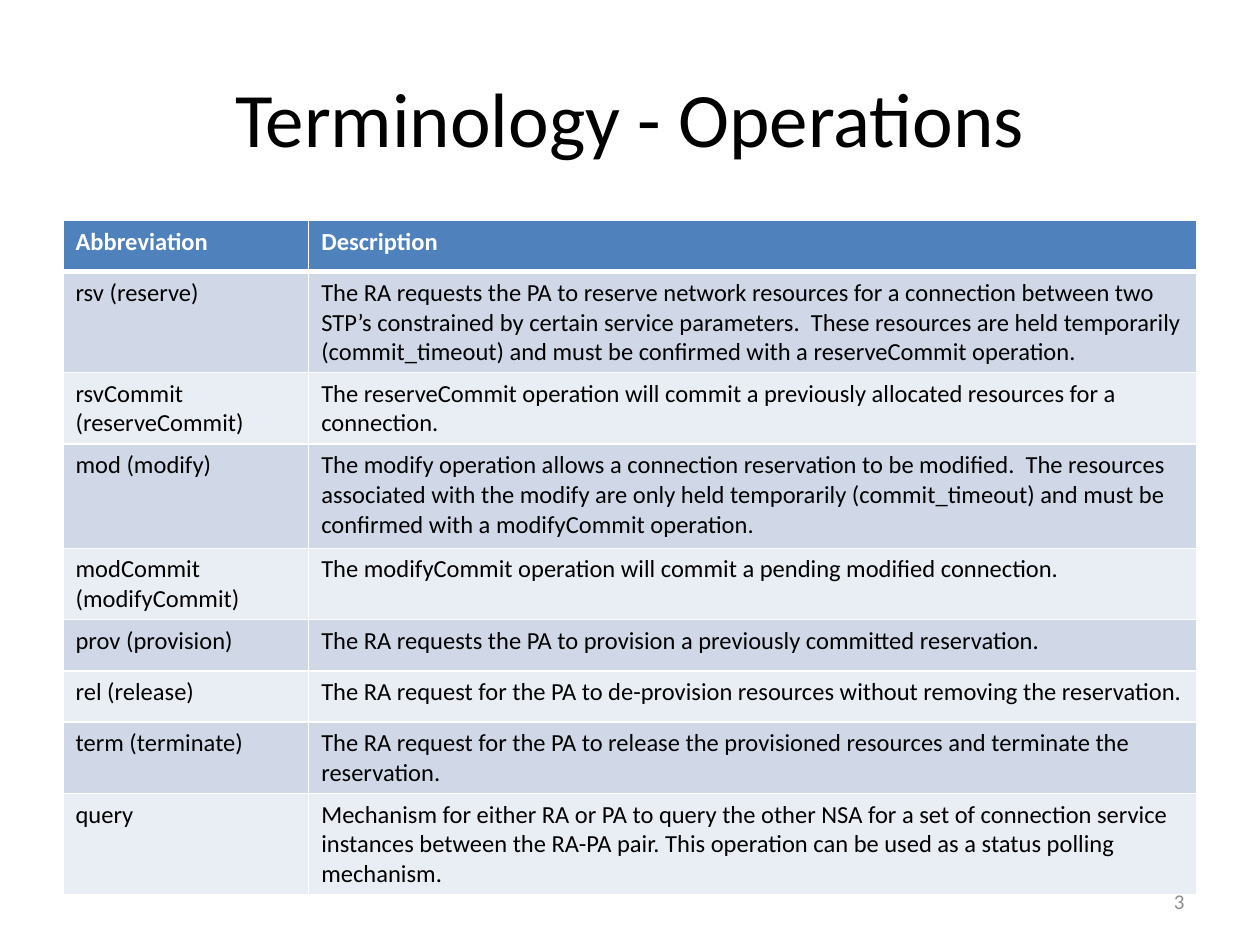
"""Build the slide of operation terms with its table."""
from lxml.etree import SubElement
from pptx import Presentation
from pptx.dml.color import RGBColor as Rgb
from pptx.enum.text import MSO_ANCHOR as Anchor, PP_ALIGN as Align
from pptx.oxml.ns import qn
from pptx.util import Pt

HUES = {"head": "4F81BD", "dark": "D0D8E8", "light": "E9EDF4",
        "white": "FFFFFF", "black": "000000", "gray": "8C8C8C"}
ROWS = [
    ("Abbreviation", "Description"),
    ("rsv (reserve)",
     "The RA requests the PA to reserve network resources for a connection "
     "between two STP’s constrained by certain service parameters.  These "
     "resources are held temporarily (commit_timeout) and must be confirmed "
     "with a reserveCommit operation."),
    ("rsvCommit (reserveCommit)",
     "The reserveCommit operation will commit a previously allocated "
     "resources for a connection."),
    ("mod (modify)",
     "The modify operation allows a connection reservation to be modified.  "
     "The resources associated with the modify are only held temporarily "
     "(commit_timeout) and must be confirmed with a modifyCommit operation."),
    ("modCommit (modifyCommit)",
     "The modifyCommit operation will commit a pending modified connection."),
    ("prov (provision)",
     "The RA requests the PA to provision a previously committed reservation."),
    ("rel (release)",
     "The RA request for the PA to de-provision resources without removing "
     "the reservation."),
    ("term (terminate)",
     "The RA request for the PA to release the provisioned resources and "
     "terminate the reservation."),
    ("query",
     "Mechanism for either RA or PA to query the other NSA for a set of "
     "connection service instances between the RA-PA pair. This operation "
     "can be used as a status polling mechanism."),
]


def style(frame, text, size, hue, align=Align.LEFT, bold=False):
    frame.text = text
    frame.word_wrap = True
    para = frame.paragraphs[0]
    para.alignment = align
    font = para.runs[0].font
    font.name, font.size, font.bold = "Calibri", Pt(size), bold
    font.color.rgb = Rgb.from_string(HUES[hue])


def edge(cell, side, width):
    line = SubElement(cell._tc.get_or_add_tcPr(), qn("a:ln" + side),
                      w=str(Pt(width)))
    fill = SubElement(line, qn("a:solidFill"))
    SubElement(fill, qn("a:srgbClr"), val=HUES["white"])


deck = Presentation()
deck.slide_width, deck.slide_height = Pt(720), Pt(540)
slide = deck.slides.add_slide(deck.slide_layouts[6])
shapes = slide.shapes

title = shapes.add_textbox(Pt(36), Pt(21.6), Pt(648), Pt(90)).text_frame
style(title, "Terminology - Operations", 44, "black", Align.CENTER)
title.vertical_anchor = Anchor.MIDDLE

table = shapes.add_table(len(ROWS), 2, Pt(36), Pt(126), Pt(648), Pt(384.5)).table
for col, width in zip(table.columns, (140.4, 507.6)):
    col.width = Pt(width)
for r, texts in enumerate(ROWS):
    table.rows[r].height = Pt(59.6 if r == 3 else 29.2)
    hue = "head" if r == 0 else "dark" if r % 2 else "light"
    for c, text in enumerate(texts):
        cell = table.cell(r, c)
        style(cell.text_frame, text, 14, "black" if r else "white", bold=r == 0)
        for side in "LRTB":
            thick = (r, side) in ((0, "B"), (1, "T"))
            edge(cell, side, 3 if thick else 1)
        cell.fill.solid()
        cell.fill.fore_color.rgb = Rgb.from_string(HUES[hue])

page = shapes.add_textbox(Pt(516), Pt(500.5), Pt(168), Pt(28.8)).text_frame
style(page, "3", 12, "gray", Align.RIGHT)
page.vertical_anchor = Anchor.MIDDLE

deck.save("out.pptx")
